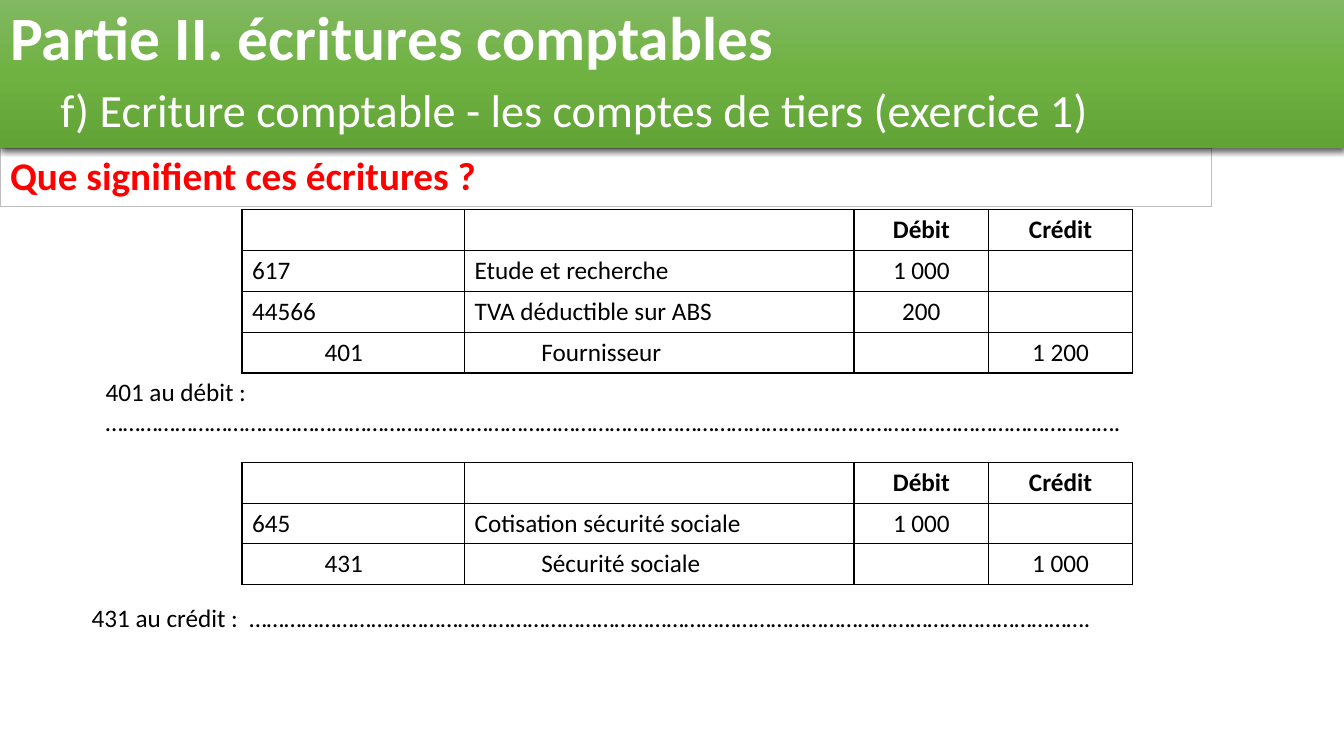
import dataclasses

import pptx
import pptx.dml.color
import pptx.enum.text
import pptx.oxml
import pptx.oxml.ns
import pptx.util

Cm = pptx.util.Cm
Pt = pptx.util.Pt
ALIGN = pptx.enum.text.PP_ALIGN
NS = pptx.oxml.ns.nsdecls("a")


@dataclasses.dataclass
class Theme:
    font: str = "Calibri"
    black: str = "000000"
    white: str = "FFFFFF"
    red: str = "FF0000"
    grey: str = "BFBFBF"
    greens: tuple = ((0, "81B861"), (50, "6FB242"), (100, "62A336"))
    head: int = 44
    sub: int = 33
    ask: int = 28
    text: int = 18


class Page:
    def __init__(self, slide, theme):
        self.slide = slide
        self.theme = theme

    def add_run(self, para, text, size, color, bold=False):
        run = para.add_run()
        run.text = text
        style = {"name": self.theme.font, "size": Pt(size), "bold": bold}
        for key, value in style.items():
            setattr(run.font, key, value)
        run.font.color.rgb = pptx.dml.color.RGBColor.from_string(color)

    def banner(self, head, sub, width, height):
        """Fill the title placeholder and raise it above what is already there."""
        look = self.theme
        title = self.slide.shapes.title
        place = {"left": 0, "top": 0, "width": Cm(width), "height": Cm(height)}
        for key, value in place.items():
            setattr(title, key, value)
        frame = title.text_frame
        form = {
            "word_wrap": True,
            "auto_size": pptx.enum.text.MSO_AUTO_SIZE.NONE,
            "vertical_anchor": pptx.enum.text.MSO_ANCHOR.MIDDLE,
        }
        for key, value in form.items():
            setattr(frame, key, value)
        para = frame.paragraphs[0]
        para.alignment = ALIGN.LEFT
        para.line_spacing = 0.9
        self.add_run(para, head, look.head, look.white, True)
        para.add_line_break()
        self.add_run(para, "\t", look.head, look.white, True)
        self.add_run(para, sub, look.sub, look.white)
        stops = "".join(
            f'<a:gs pos="{pos * 1000}"><a:srgbClr val="{color}"/></a:gs>'
            for pos, color in look.greens
        )
        props = title._element.spPr
        for xml in (
            f'<a:gradFill {NS}><a:gsLst>{stops}</a:gsLst>'
            '<a:lin ang="5400000" scaled="0"/></a:gradFill>',
            f'<a:effectLst {NS}><a:outerShdw blurRad="{Pt(4.5)}" dist="{Pt(1.5)}" '
            f'dir="5400000" rotWithShape="0"><a:srgbClr val="{look.black}">'
            '<a:alpha val="63000"/></a:srgbClr></a:outerShdw></a:effectLst>',
        ):
            props.append(pptx.oxml.parse_xml(xml))
        title._element.getparent().append(title._element)

    def grid(self, left, top, cols, count, height):
        frame = self.slide.shapes.add_table(
            count, len(cols), Cm(left), Cm(top), Cm(sum(cols)), Cm(height * count)
        )
        table = frame.table
        table.first_row = table.horz_banding = False
        for col, width in zip(table.columns, cols):
            col.width = Cm(width)
        for row in table.rows:
            row.height = Cm(height)
        return table

    def frame(self, cell, color, width, skip=""):
        """Clear the cell's fill and draw its sides, except those in skip."""
        props = cell._tc.get_or_add_tcPr()
        for side in "LRTB":
            paint = (
                "<a:noFill/>" if side in skip
                else f'<a:solidFill><a:srgbClr val="{color}"/></a:solidFill>'
            )
            props.append(pptx.oxml.parse_xml(
                f'<a:ln{side} {NS} w="{Pt(width)}">{paint}</a:ln{side}>'
            ))
        cell.fill.background()

    def ask(self, text, top, width, height):
        look = self.theme
        cell = self.grid(0, top, [width], 1, height).cell(0, 0)
        self.add_run(cell.text_frame.paragraphs[0], text, look.ask, look.red, True)
        self.frame(cell, look.grey, 0.5)

    def ledger(self, top, rows):
        """Draw a journal entry; its last row is the indented credit line."""
        look = self.theme
        cols = [1.83, 3.78, 1.68, 8.13, 3.4, 3.61]
        last = len(rows)
        table = self.grid(6.1, top, cols, last + 1, 1.02)
        for r, row in enumerate([("", "", "Débit", "Crédit"), *rows]):
            shift = int(r == last)
            if not shift:
                for c in (0, 2):
                    table.cell(r, c).merge(table.cell(r, c + 1))
            for c, text in zip((shift, 2 + shift, 4, 5), row):
                if text:
                    para = table.cell(r, c).text_frame.paragraphs[0]
                    para.alignment = ALIGN.CENTER if c > 3 else ALIGN.LEFT
                    self.add_run(para, text, look.text, look.black, r == 0)
            for c in range(len(cols)):
                skip = "RL"[c % 2] if shift and c < 4 else ""
                self.frame(table.cell(r, c), look.black, 1, skip)

    def note(self, text, left, top):
        box = self.slide.shapes.add_textbox(Cm(left), Cm(top), Cm(29.74), Cm(1.02))
        box.text_frame.word_wrap = True
        para = box.text_frame.paragraphs[0]
        self.add_run(para, text, self.theme.text, self.theme.black)


def main():
    deck = pptx.Presentation()
    deck.slide_width, deck.slide_height = Cm(33.87), Cm(19.05)
    page = Page(deck.slides.add_slide(deck.slide_layouts[5]), Theme())
    page.ask("Que signifient ces écritures ?", 3.73, 30.53, 1.45)
    page.banner(
        "Partie II. écritures comptables",
        "f) Ecriture comptable - les comptes de tiers (exercice 1)",
        33.87, 3.73,
    )
    page.ledger(5.28, [
        ("617", "Etude et recherche", "1 000", ""),
        ("44566", "TVA déductible sur ABS", "200", ""),
        ("401", "Fournisseur", "", "1 200"),
    ])
    page.note(
        "401 au débit : ………………………………………………………………………………………………………………………………………………………….",
        2.41, 9.35,
    )
    page.ledger(11.66, [
        ("645", "Cotisation sécurité sociale", "1 000", ""),
        ("431", "Sécurité sociale", "", "1 000"),
    ])
    page.note(
        "431 au crédit :  ……………………………………………………………………………………………………………………………….",
        2.06, 15.06,
    )
    deck.save("out.pptx")


if __name__ == "__main__":
    main()
